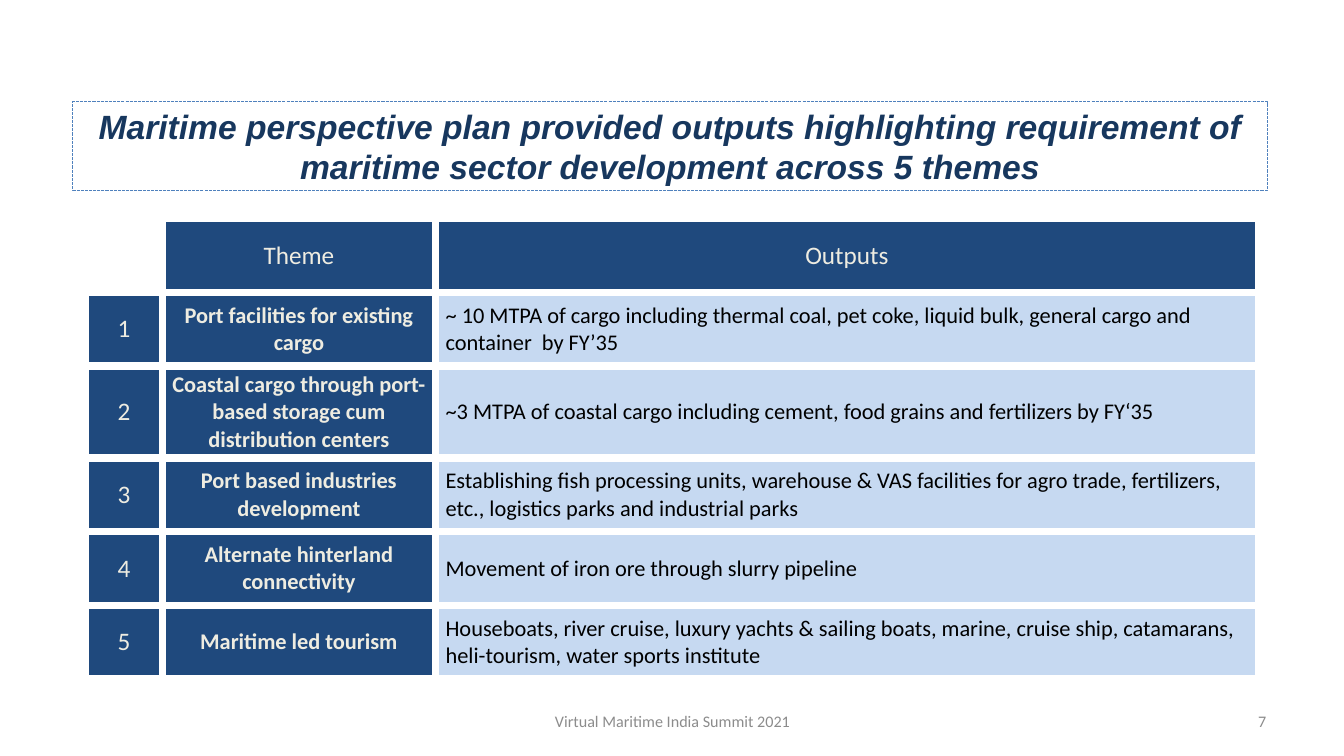
from dataclasses import dataclass

from lxml import etree
from pptx import Presentation, util as u
from pptx.dml.color import RGBColor
from pptx.enum import dml, text
from pptx.oxml.ns import qn

SLIDE_W, SLIDE_H = 13.33, 7.5
COLUMNS = (0.76, 2.71, 8.16)
ROW_H, TALL_ROW_H = 0.73, 0.91
TALL_ROW = 2

THEMES = (
    ("Port facilities for existing cargo",
     "~ 10 MTPA of cargo including thermal coal, pet coke, liquid bulk, "
     "general cargo and container  by FY’35"),
    ("Coastal cargo through port-based storage cum distribution centers",
     "~3 MTPA of coastal cargo including cement, food grains and fertilizers by FY‘35"),
    ("Port based industries development",
     "Establishing fish processing units, warehouse & VAS facilities for agro trade, "
     "fertilizers, etc., logistics parks and industrial parks"),
    ("Alternate hinterland connectivity", "Movement of iron ore through slurry pipeline"),
    ("Maritime led tourism",
     "Houseboats, river cruise, luxury yachts & sailing boats, marine, cruise ship, "
     "catamarans, heli-tourism, water sports institute"),
)


@dataclass(frozen=True)
class Theme:
    """Colours, fonts and type sizes of the slide."""
    navy: str = "1F497D"
    pale: str = "C6D9F1"
    cream: str = "EEECE1"
    black: str = "000000"
    white: str = "FFFFFF"
    grey: str = "8C8C8C"
    heading: str = "17375E"
    outline: str = "4F81BD"
    heading_font: str = "Arial"
    body_font: str = "Calibri"
    heading_size: float = 24
    label_size: float = 18
    body_size: float = 16
    footer_size: float = 11.5
    gap: float = 6


THEME = Theme()
CENTER, LEFT, RIGHT = text.PP_ALIGN.CENTER, text.PP_ALIGN.LEFT, text.PP_ALIGN.RIGHT


def write(frame, words, size, color, align, font=THEME.body_font, bold=False, italic=False):
    """Put one formatted paragraph into a text frame."""
    frame.text = words
    frame.word_wrap = True
    paragraph = frame.paragraphs[0]
    paragraph.alignment = align
    style = paragraph.runs[0].font
    style.name, style.size = font, u.Pt(size)
    style.bold, style.italic = bold, italic
    style.color.rgb = RGBColor.from_string(color)


def add_heading(slide, words):
    """Place and format the title with its dashed frame."""
    title = slide.shapes.title
    title.left, title.top = u.Inches(0.72), u.Inches(1.01)
    title.width, title.height = u.Inches(11.85), u.Inches(0.88)
    title.line.color.rgb = RGBColor.from_string(THEME.outline)
    title.line.width = u.Pt(0.75)
    title.line.dash_style = dml.MSO_LINE.SQUARE_DOT
    frame = title.text_frame
    frame.margin_left = frame.margin_right = 0
    frame.margin_top = frame.margin_bottom = u.Inches(0.06)
    frame.vertical_anchor = text.MSO_ANCHOR.MIDDLE
    frame.auto_size = text.MSO_AUTO_SIZE.NONE
    write(frame, words, THEME.heading_size, THEME.heading, CENTER,
          THEME.heading_font, bold=True, italic=True)


def add_borders(cell):
    """Draw the white gaps around a cell."""
    properties = cell._tc.get_or_add_tcPr()
    for position, side in enumerate(("lnL", "lnR", "lnT", "lnB")):
        line = etree.Element(qn(f"a:{side}"), w=str(u.Pt(THEME.gap)))
        fill = etree.SubElement(line, qn("a:solidFill"))
        etree.SubElement(fill, qn("a:srgbClr"), val=THEME.white)
        properties.insert(position, line)


def fill_cell(cell, words, fill, size, color, align=CENTER, bold=False):
    """Colour a table cell and write its text."""
    cell.fill.solid()
    cell.fill.fore_color.rgb = RGBColor.from_string(fill)
    cell.vertical_anchor = text.MSO_ANCHOR.MIDDLE
    write(cell.text_frame, words, size, color, align, bold=bold)


def fill_label(cell, words):
    """Write a header or row number in a navy cell."""
    fill_cell(cell, words, THEME.navy, THEME.label_size, THEME.cream)


def add_outputs_table(slide):
    """Build the table of themes and their outputs."""
    heights = [TALL_ROW_H if row == TALL_ROW else ROW_H for row in range(len(THEMES) + 1)]
    table = slide.shapes.add_table(
        len(heights), len(COLUMNS), u.Inches(0.85), u.Inches(2.17),
        u.Inches(sum(COLUMNS)), u.Inches(sum(heights))).table
    table.first_row = table.horz_banding = False
    for column, width in zip(table.columns, COLUMNS):
        column.width = u.Inches(width)
    for row, height in zip(table.rows, heights):
        row.height = u.Inches(height)
    table.cell(0, 0).fill.background()
    fill_label(table.cell(0, 1), "Theme")
    fill_label(table.cell(0, 2), "Outputs")
    for number, (theme, outputs) in enumerate(THEMES, 1):
        fill_label(table.cell(number, 0), str(number))
        fill_cell(table.cell(number, 1), theme, THEME.navy, THEME.body_size,
                  THEME.cream, bold=True)
        fill_cell(table.cell(number, 2), outputs, THEME.pale, THEME.body_size,
                  THEME.black, LEFT)
    for cell in table.iter_cells():
        add_borders(cell)


def add_footer(slide, words, left, width, align):
    """Add a small grey text on the footer line."""
    box = slide.shapes.add_textbox(u.Inches(left), u.Inches(6.95),
                                   u.Inches(width), u.Inches(0.4))
    frame = box.text_frame
    frame.margin_left = frame.margin_right = u.Inches(0.11)
    frame.margin_top = frame.margin_bottom = u.Inches(0.06)
    frame.vertical_anchor = text.MSO_ANCHOR.MIDDLE
    write(frame, words, THEME.footer_size, THEME.grey, align)


def main():
    """Build and save the slide."""
    deck = Presentation()
    deck.slide_width, deck.slide_height = u.Inches(SLIDE_W), u.Inches(SLIDE_H)
    slide = deck.slides.add_slide(deck.slide_layouts[5])
    add_heading(slide, "Maritime perspective plan provided outputs highlighting requirement "
                       "of maritime sector development across 5 themes")
    add_outputs_table(slide)
    add_footer(slide, "Virtual Maritime India Summit 2021", 4.56, 4.22, CENTER)
    add_footer(slide, "7", 9.56, 3.11, RIGHT)
    deck.save("out.pptx")


if __name__ == "__main__":
    main()
